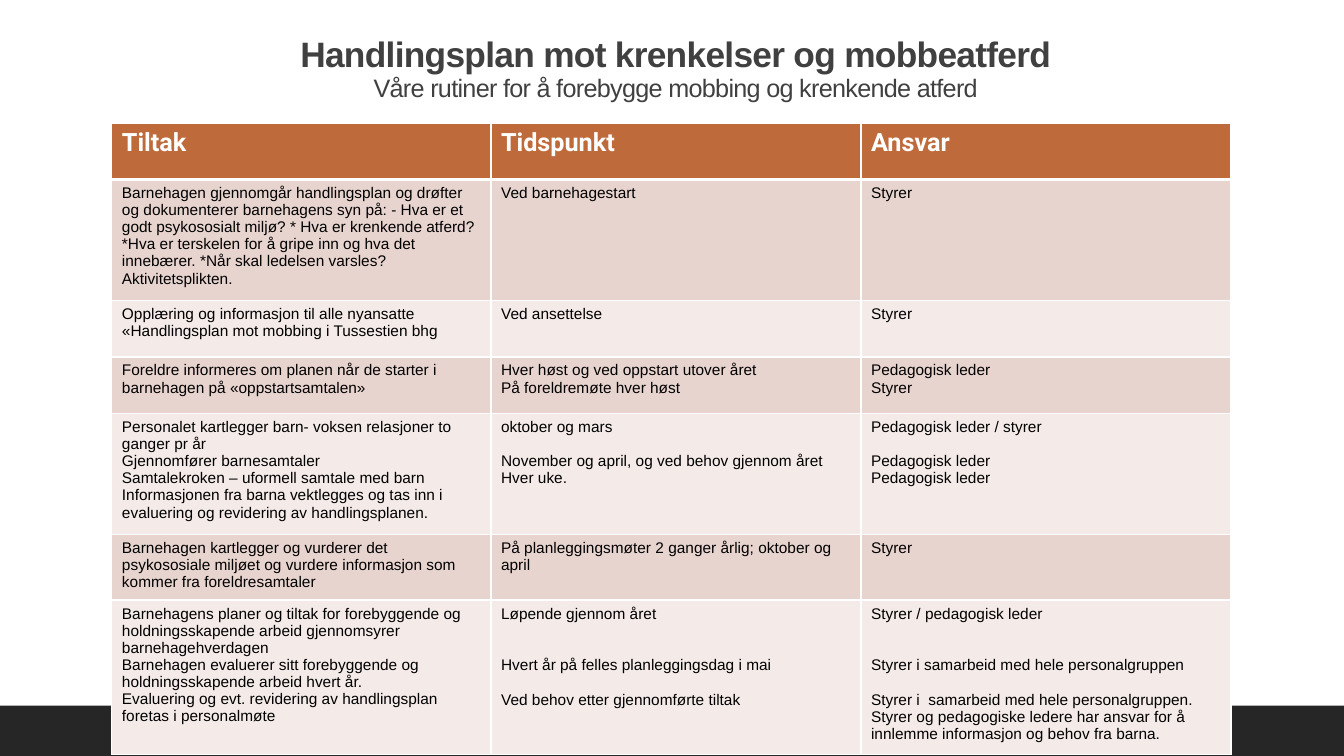
from dataclasses import dataclass

from lxml.etree import SubElement
from pptx import Presentation
from pptx.dml.color import RGBColor
from pptx.enum.shapes import MSO_SHAPE
from pptx.enum.text import MSO_ANCHOR, PP_ALIGN
from pptx.oxml.ns import qn
from pptx.util import Inches, Pt


@dataclass(frozen=True)
class Theme:
    dark: str = "262626"
    title: str = "404040"
    header: str = "BF6A3B"
    bands: tuple = ("E8D4CE", "F4EBE8")
    white: str = "FFFFFF"
    black: str = "000000"
    body_font: str = "Arial"
    header_font: str = "Roboto"
    title_size: float = 25.2
    subtitle_size: float = 18
    header_size: float = 18
    body_size: float = 11
    line_height: float = 12.4


THEME = Theme()

HEADINGS = ("Tiltak", "Tidspunkt", "Ansvar")
COLUMN_WIDTHS = (3.76, 3.67, 3.67)
ROW_HEIGHT = 0.56

# Each cell lists its paragraphs; a number is a gap of that many lines.
ROUTINES = [
    (["Barnehagen gjennomgår handlingsplan og drøfter og dokumenterer barnehagens syn på: "
      "- Hva er et godt psykososialt miljø? * Hva er krenkende atferd? "
      "*Hva er terskelen for å gripe inn og hva det innebærer. "
      "*Når skal ledelsen varsles? Aktivitetsplikten."],
     ["Ved barnehagestart"],
     ["Styrer"]),
    (["Opplæring og informasjon til alle nyansatte «Handlingsplan mot mobbing i Tussestien bhg"],
     ["Ved ansettelse"],
     ["Styrer"]),
    (["Foreldre informeres om planen når de starter i barnehagen på «oppstartsamtalen»"],
     ["Hver høst og ved oppstart utover året", "På foreldremøte hver høst"],
     ["Pedagogisk leder", "Styrer"]),
    (["Personalet kartlegger barn- voksen relasjoner to ganger pr år",
      "Gjennomfører barnesamtaler",
      "Samtalekroken – uformell samtale med barn",
      "Informasjonen fra barna vektlegges og tas inn i evaluering og revidering av "
      "handlingsplanen."],
     ["oktober og mars", 1, "November og april, og ved behov gjennom året", "Hver uke."],
     ["Pedagogisk leder / styrer", 1, "Pedagogisk leder", "Pedagogisk leder"]),
    (["Barnehagen kartlegger og vurderer det psykososiale miljøet og vurdere informasjon "
      "som kommer fra foreldresamtaler"],
     ["På planleggingsmøter 2 ganger årlig; oktober og april"],
     ["Styrer"]),
    (["Barnehagens planer og tiltak for forebyggende og holdningsskapende arbeid "
      "gjennomsyrer barnehagehverdagen",
      "Barnehagen evaluerer sitt forebyggende og holdningsskapende arbeid hvert år.",
      "Evaluering og evt. revidering av handlingsplan foretas i personalmøte"],
     ["Løpende gjennom året", 2, "Hvert år på felles planleggingsdag i mai", 1,
      "Ved behov etter gjennomførte tiltak"],
     ["Styrer / pedagogisk leder", 2, "Styrer i samarbeid med hele personalgruppen", 1,
      "Styrer i  samarbeid med hele personalgruppen.",
      "Styrer og pedagogiske ledere har ansvar for å innlemme informasjon og behov fra barna."]),
]


def add_run(paragraph, text, font, size, color, bold=False):
    run = paragraph.add_run()
    run.text = text
    run.font.name = font
    run.font.size = Pt(size)
    run.font.bold = bold
    run.font.color.rgb = RGBColor.from_string(color)
    return run


def add_footer_band(slide):
    shape = slide.shapes.add_shape(
        MSO_SHAPE.RECTANGLE, Inches(0), Inches(7), Inches(13.33), Inches(0.5))
    shape.shadow.inherit = False
    shape.fill.solid()
    shape.fill.fore_color.rgb = RGBColor.from_string(THEME.dark)
    shape.line.fill.background()


def add_title(slide, title, subtitle):
    text_box = slide.shapes.add_textbox(Inches(1.2), Inches(0.31), Inches(11), Inches(0.76))
    frame = text_box.text_frame
    frame.word_wrap = True
    frame.vertical_anchor = MSO_ANCHOR.BOTTOM
    paragraph = frame.paragraphs[0]
    paragraph.alignment = PP_ALIGN.CENTER
    paragraph.line_spacing = 0.9
    heading = add_run(paragraph, title, THEME.body_font, THEME.title_size, THEME.title, True)
    paragraph.add_line_break()
    subheading = add_run(paragraph, subtitle, THEME.body_font, THEME.subtitle_size, THEME.title)
    for run in (heading, subheading):
        run.font._element.set("spc", "-50")


def set_borders(cell, top, bottom):
    properties = cell._tc.get_or_add_tcPr()
    sides = (("a:lnL", 1), ("a:lnR", 1), ("a:lnT", top), ("a:lnB", bottom))
    for index, (tag, width) in enumerate(sides):
        line = SubElement(properties, qn(tag), w=str(Pt(width)))
        fill = SubElement(line, qn("a:solidFill"))
        SubElement(fill, qn("a:srgbClr"), val=THEME.white)
        properties.insert(index, line)  # borders come before the cell fill


def style_cell(cell, fill, top=1, bottom=1):
    cell.fill.solid()
    cell.fill.fore_color.rgb = RGBColor.from_string(fill)
    set_borders(cell, top, bottom)


def fill_body_cell(cell, content):
    frame = cell.text_frame
    paragraph = frame.paragraphs[0]
    gap = 0
    for index, item in enumerate(content):
        if isinstance(item, int):
            gap = item
            continue
        if index > 0:
            paragraph = frame.add_paragraph()
        if gap:
            paragraph.space_before = Pt(gap * THEME.line_height)
            gap = 0
        add_run(paragraph, item, THEME.body_font, THEME.body_size, THEME.black)
        # The paragraph end keeps the body size, so rows do not grow
        SubElement(paragraph._p, qn("a:endParaRPr"), sz=str(THEME.body_size * 100))


def add_routine_table(slide):
    row_count = len(ROUTINES) + 1
    table = slide.shapes.add_table(
        row_count, len(HEADINGS), Inches(1.11), Inches(1.22),
        Inches(sum(COLUMN_WIDTHS)), Inches(row_count * ROW_HEIGHT)).table
    for column, width in zip(table.columns, COLUMN_WIDTHS):
        column.width = Inches(width)

    # Header row
    for cell, heading in zip(table.rows[0].cells, HEADINGS):
        add_run(cell.text_frame.paragraphs[0], heading, THEME.header_font,
                THEME.header_size, THEME.white, True)
        style_cell(cell, THEME.header, bottom=3)

    # Banded body rows
    for index, routine in enumerate(ROUTINES):
        for cell, content in zip(table.rows[index + 1].cells, routine):
            fill_body_cell(cell, content)
            style_cell(cell, THEME.bands[index % 2], top=3 if index == 0 else 1)


def main():
    presentation = Presentation()
    presentation.slide_width = Inches(13.33)
    presentation.slide_height = Inches(7.5)
    slide = presentation.slides.add_slide(presentation.slide_layouts[6])
    add_footer_band(slide)
    add_title(slide, "Handlingsplan mot krenkelser og mobbeatferd",
              "Våre rutiner for å forebygge mobbing og krenkende atferd")
    add_routine_table(slide)
    presentation.save("out.pptx")


if __name__ == "__main__":
    main()
